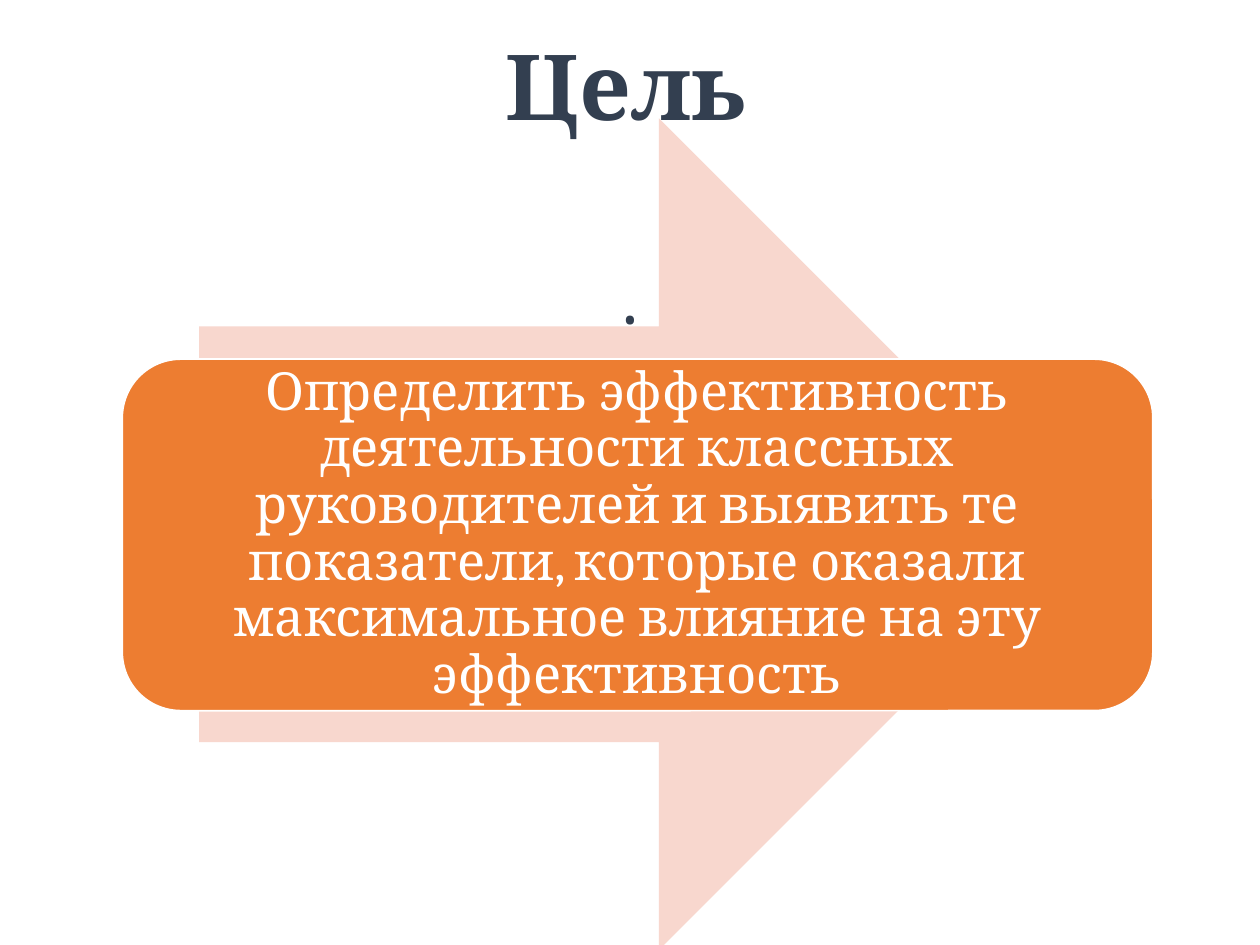
from pptx import Presentation
from pptx.dml.color import RGBColor
from pptx.enum.shapes import MSO_SHAPE as Shape
from pptx.enum.text import MSO_ANCHOR as Anchor, PP_ALIGN as Align
from pptx.oxml.ns import qn
from pptx.util import Inches, Pt

# Content
TITLE = "Цель"
BODY = "."
GOAL = ("Определить эффективность деятельности классных руководителей "
        "и выявить те показатели, которые оказали максимальное влияние "
        "на эту эффективность")

# Style
FONT = "Cambria"
COLORS = {"text": "333F50", "arrow": "F8D7CE", "card": "ED7D31", "white": "FFFFFF"}
BOXES = {
    "title": (0.66, 0, 8.62, 1.45),
    "body": (0.69, 2, 8.62, 4.76),
    "arrow": (1.58, 0.94, 6.95, 6.6),
    "card": (0.97, 2.85, 8.18, 2.79),
}


def color(name):
    return RGBColor.from_string(COLORS[name])


def box(name):
    return [Inches(v) for v in BOXES[name]]


def place(sp, name):
    sp.left, sp.top, sp.width, sp.height = box(name)


def write(sp, text, anchor, size, fill, bold=False, before=0):
    tf = sp.text_frame
    tf.word_wrap = True
    tf.vertical_anchor = anchor
    p = tf.paragraphs[0]
    p.text = text
    layout = {"alignment": Align.CENTER, "line_spacing": 0.9, "space_before": Pt(before)}
    for key, value in layout.items():
        setattr(p, key, value)
    font = p.runs[0].font
    for key, value in {"name": FONT, "size": Pt(size), "bold": bold}.items():
        setattr(font, key, value)
    font.color.rgb = color(fill)
    return p


def add_block(slide, kind, name):
    sp = slide.shapes.add_shape(kind, *box(name))
    sp.shadow.inherit = False
    sp.fill.solid()
    sp.fill.fore_color.rgb = color(name)
    sp.line.fill.background()
    return sp


prs = Presentation()
prs.slide_width, prs.slide_height = Inches(10), Inches(7.5)
slide = prs.slides.add_slide(prs.slide_layouts[1])

# Title and body
title, body = slide.placeholders
place(title, "title")
write(title, TITLE, Anchor.MIDDLE, 52, "text", bold=True)
place(body, "body")
p = write(body, BODY, Anchor.TOP, 44, "text")
pPr = p._p.get_or_add_pPr()
pPr.set("marL", "0")
pPr.set("indent", "0")
pPr.append(pPr.makeelement(qn("a:buNone"), {}))

# Arrow with the goal card over it
add_block(slide, Shape.RIGHT_ARROW, "arrow")
card = add_block(slide, Shape.ROUNDED_RECTANGLE, "card")
card.line.color.rgb = color("white")
card.line.width = Pt(1)
for side in ("left", "top", "right", "bottom"):
    setattr(card.text_frame, f"margin_{side}", Inches(0.12))
write(card, GOAL, Anchor.MIDDLE, 30, "white")

prs.save("out.pptx")
